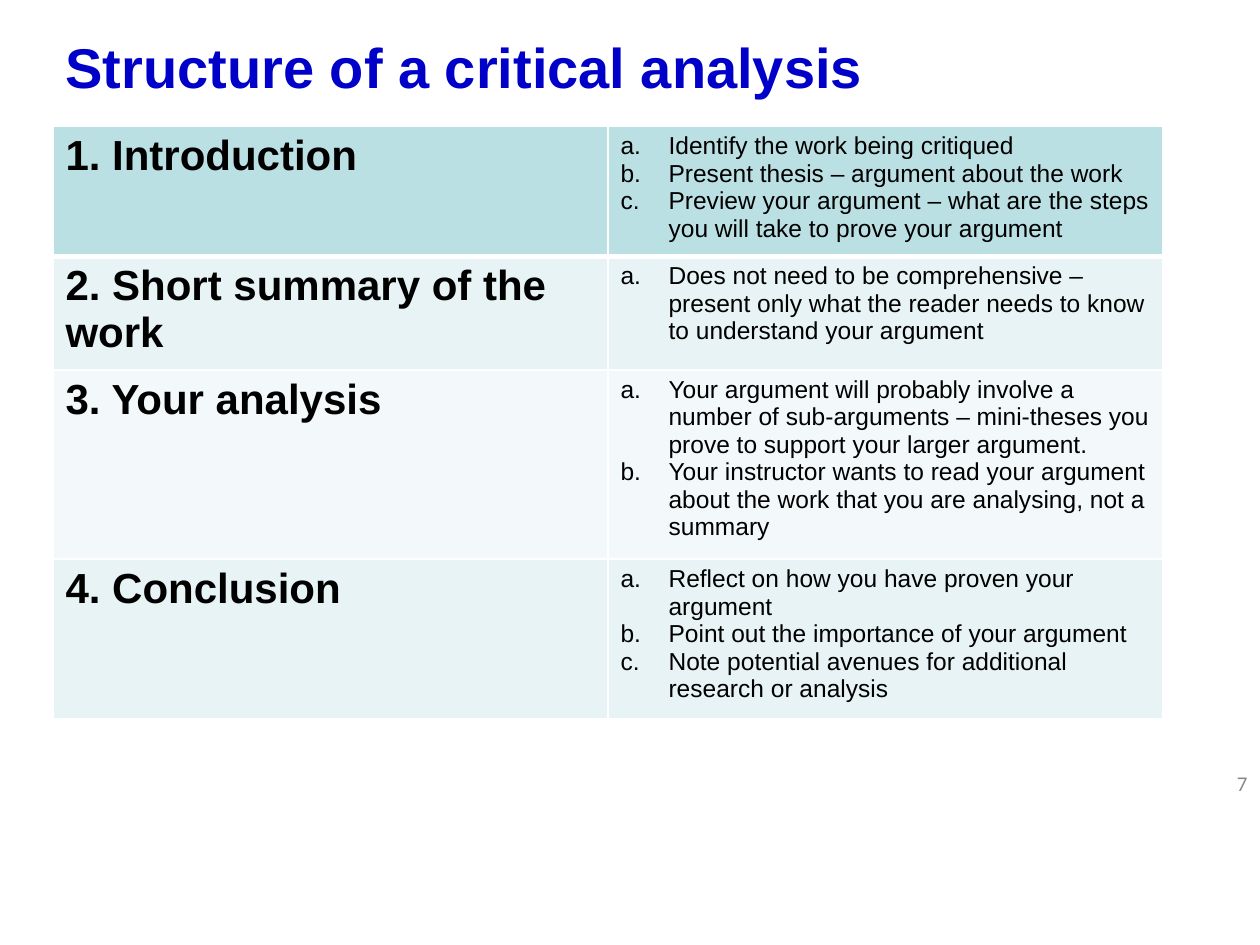
import pptx
import pptx.dml.color
import pptx.enum.text
import pptx.oxml
import pptx.oxml.ns
import pptx.util
from lxml import etree

EMU_PER_PX = 914400 / 126
ALIGN = pptx.enum.text.PP_ALIGN
MIDDLE = pptx.enum.text.MSO_ANCHOR.MIDDLE

TITLE_FONT = {"name": "Arial", "size": pptx.util.Pt(32), "bold": True}
SECTION_FONT = {"name": "Arial", "size": pptx.util.Pt(24), "bold": True}
POINT_FONT = {"name": "Arial", "size": pptx.util.Pt(14), "bold": False}
NUMBER_FONT = {"name": "Calibri", "size": pptx.util.Pt(12), "bold": False}

SECTIONS = [
    ("1. Introduction", "BBE0E3", [
        "Identify the work being critiqued",
        "Present thesis – argument about the work",
        "Preview your argument – what are the steps you will take to prove your argument",
    ]),
    ("2. Short summary of the work", "E7F3F4", [
        "Does not need to be comprehensive – present only what the reader needs to know "
        "to understand your argument",
    ]),
    ("3. Your analysis", "F3F9FA", [
        "Your argument will probably involve a number of sub-arguments – mini-theses you "
        "prove to support your larger argument.",
        "Your instructor wants to read your argument about the work that you are "
        "analysing, not a summary",
    ]),
    ("4. Conclusion", "E7F3F4", [
        "Reflect on how you have proven your argument",
        "Point out the importance of your argument",
        "Note potential avenues for additional research or analysis",
    ]),
]


def px(length):
    return pptx.util.Emu(round(length * EMU_PER_PX))


def rgb(value):
    return pptx.dml.color.RGBColor.from_string(value)


def apply(target, settings):
    for name, value in settings.items():
        setattr(target, name, value)


def write(paragraph, text, font, color):
    run = paragraph.add_run()
    run.text = text
    apply(run.font, font)
    run.font.color.rgb = rgb(color)


def write_points(frame, points):
    for index, point in enumerate(points):
        paragraph = frame.add_paragraph() if index else frame.paragraphs[0]
        properties = paragraph._p.get_or_add_pPr()
        properties.set("marL", str(px(48)))
        properties.set("indent", str(px(-48)))
        numbering = etree.SubElement(properties, pptx.oxml.ns.qn("a:buAutoNum"))
        numbering.set("type", "alphaLcPeriod")
        write(paragraph, point, POINT_FONT, "000000")


def style_cell(cell, fill, top_width, bottom_width):
    properties = cell._tc.get_or_add_tcPr()
    for side, width in zip("LRTB", (1, 1, top_width, bottom_width)):
        properties.append(pptx.oxml.parse_xml(
            f'<a:ln{side} {pptx.oxml.ns.nsdecls("a")} w="{pptx.util.Pt(width)}">'
            '<a:solidFill><a:srgbClr val="FFFFFF"/></a:solidFill>'
            f'</a:ln{side}>'
        ))
    cell.fill.solid()
    cell.fill.fore_color.rgb = rgb(fill)


def add_title(slide, text):
    title = slide.shapes.title
    apply(title, {"left": px(53), "top": px(25), "width": px(1138), "height": px(89)})
    apply(title.text_frame, {
        "word_wrap": True, "vertical_anchor": MIDDLE, "margin_bottom": px(14),
    })
    heading = title.text_frame.paragraphs[0]
    heading.alignment = ALIGN.LEFT
    write(heading, text, TITLE_FONT, "0000C8")


def add_sections(slide):
    holder = slide.shapes.add_table(
        len(SECTIONS), 2, px(53), px(126), px(1110), px(580)
    )
    outline = holder.table
    for index, (section, fill, points) in enumerate(SECTIONS):
        outline.rows[index].height = px(52)
        section_cell, points_cell = outline.rows[index].cells
        for cell in (section_cell, points_cell):
            style_cell(cell, fill, 3 if index == 1 else 1, 3 if index == 0 else 1)
        write(section_cell.text_frame.paragraphs[0], section, SECTION_FONT, "000000")
        write_points(points_cell.text_frame, points)
    holder.height = px(580)


def add_page_number(slide, number):
    frame = slide.shapes.add_textbox(px(966), px(758), px(294), px(50)).text_frame
    apply(frame, {"word_wrap": True, "vertical_anchor": MIDDLE})
    frame.paragraphs[0].alignment = ALIGN.RIGHT
    write(frame.paragraphs[0], number, NUMBER_FONT, "898989")


def main():
    deck = pptx.Presentation()
    apply(deck, {"slide_width": px(1260), "slide_height": px(945)})
    slide = deck.slides.add_slide(deck.slide_layouts.get_by_name("Title Only"))
    add_title(slide, "Structure of a critical analysis")
    add_page_number(slide, "7")
    add_sections(slide)
    deck.save("out.pptx")


if __name__ == "__main__":
    main()
